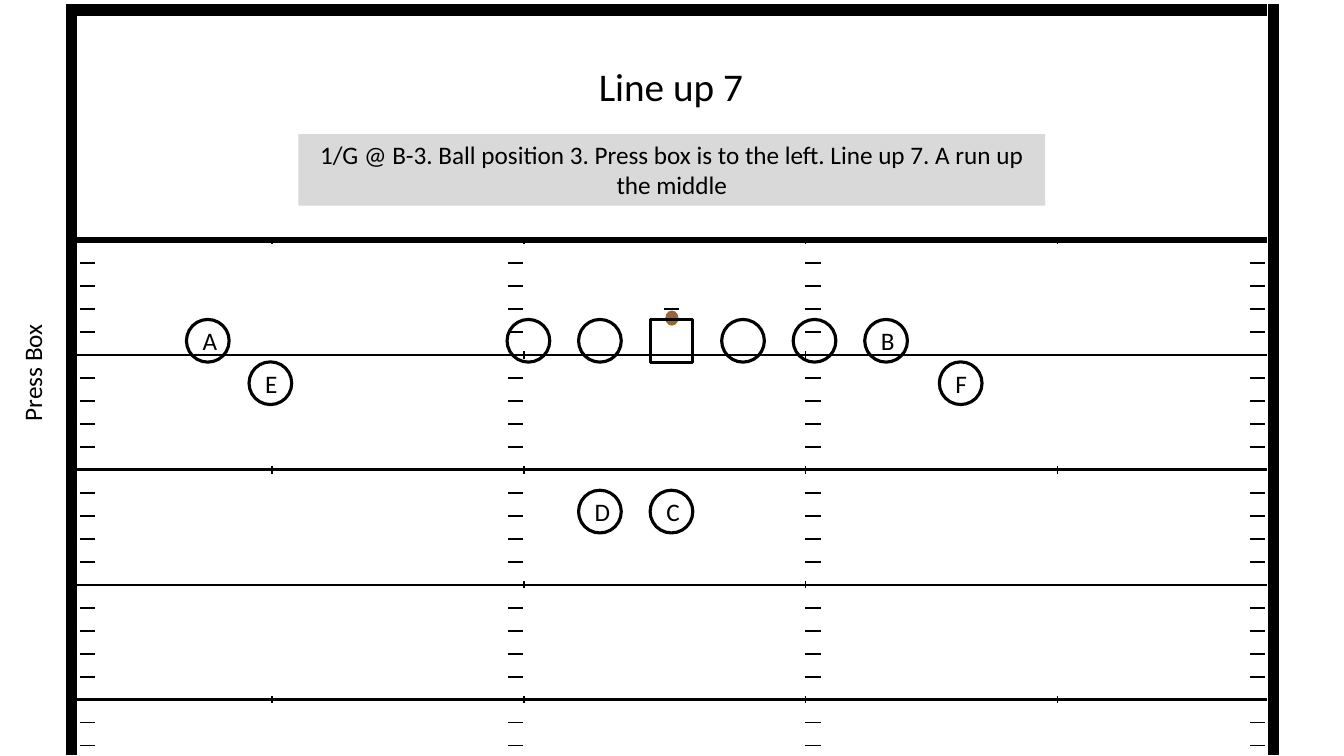
"""Builds a football line-up slide with field markings and player positions."""
from pptx import Presentation
from pptx.dml.color import RGBColor
from pptx.enum.shapes import MSO_CONNECTOR, MSO_SHAPE
from pptx.enum.text import MSO_ANCHOR, MSO_AUTO_SIZE, PP_ALIGN
from pptx.oxml.ns import qn
from pptx.util import Pt

STRAIGHT = MSO_CONNECTOR.STRAIGHT
OVAL, RECT = MSO_SHAPE.OVAL, MSO_SHAPE.RECTANGLE
TOP, MIDDLE = MSO_ANCHOR.TOP, MSO_ANCHOR.MIDDLE
LEFT, CENTER, JUSTIFY = PP_ALIGN.LEFT, PP_ALIGN.CENTER, PP_ALIGN.JUSTIFY
GROW, FIXED = MSO_AUTO_SIZE.SHAPE_TO_FIT_TEXT, MSO_AUTO_SIZE.NONE

COLORS = {"ink": "000000", "ball": "996633", "call": "D9D9D9"}
FONT = "Calibri"

TITLE = "Line up 7"
CALL = ("1/G @ B-3. Ball position 3. Press box is to the left. "
        "Line up 7. A run up the middle")
SIDE_LABEL = "Press Box"

SLIDE_W, SLIDE_H = 960, 540
FIELD_LEFT, FIELD_RIGHT = 54.7, 905
SIDELINES = [51.1, 909.4]
FIELD_TOP, BACK_LINE = 2.9, 7.2
GOAL_Y, YARD = 171.36, 16.42
YARD_LINE_WEIGHTS = [4, 1.25, 2, 1.25, 2]
HASH_COLUMNS = [56.9, 362.9, 575.3, 892.8]
HASH_W, MARK_WEIGHT = 10.8, 1.25
OUTER_TICKS, INNER_TICKS = [194.4, 755.3], [374.4, 575.3]
TICK_HALF = 2.7

CENTER_X, LINE_Y, PLAYER = 464.4, 228.2, 30.5
LINE_GAP = 51.1
WING_Y, BACK_Y = 258.5, 350.2
BLOCKERS = [-2, -1, 1, 2]
PLAYERS = [
    ("C", CENTER_X, BACK_Y),
    ("D", CENTER_X - LINE_GAP, BACK_Y),
    ("A", 133.2, LINE_Y),
    ("B", CENTER_X + 3 * LINE_GAP, LINE_Y),
    ("F", 671, WING_Y),
    ("E", 177.9, WING_Y),
]


def color(name):
    return RGBColor.from_string(COLORS[name])


def draw_line(slide, x1, y1, x2, y2, weight):
    line = slide.shapes.add_connector(STRAIGHT, Pt(x1), Pt(y1), Pt(x2), Pt(y2))
    line.line.color.rgb = color("ink")
    line.line.width = Pt(weight)
    properties = line._element.spPr
    properties.append(properties.makeelement(qn("a:effectLst"), {}))


def draw_shape(slide, kind, box, fill=None, weight=0):
    shape = slide.shapes.add_shape(kind, *map(Pt, box))
    shape.shadow.inherit = False
    if fill:
        shape.fill.solid()
        shape.fill.fore_color.rgb = color(fill)
    else:
        shape.fill.background()
    if weight:
        shape.line.color.rgb = color("ink")
        shape.line.width = Pt(weight)
    else:
        shape.line.fill.background()
    return shape


def write(shape, text, size, align, anchor=TOP, wrap=True, fit=GROW):
    frame = shape.text_frame
    frame.text = text
    frame_format = {"word_wrap": wrap, "auto_size": fit, "vertical_anchor": anchor}
    for key, value in frame_format.items():
        setattr(frame, key, value)
    paragraph = frame.paragraphs[0]
    paragraph.alignment = align
    font = paragraph.runs[0].font
    for key, value in {"name": FONT, "size": Pt(size)}.items():
        setattr(font, key, value)
    font.color.rgb = color("ink")


def place(shape, box):
    for key, value in zip(("left", "top", "width", "height"), box):
        setattr(shape, key, Pt(value))


def draw_field(slide):
    for index, weight in enumerate(YARD_LINE_WEIGHTS):
        y = GOAL_Y + 5 * index * YARD
        draw_line(slide, FIELD_LEFT, y, FIELD_RIGHT, y, weight)
        ticks = INNER_TICKS if index % 2 else INNER_TICKS + OUTER_TICKS
        tick_top = y - TICK_HALF if index else y
        for x in ticks:
            draw_line(slide, x, tick_top, x, y + TICK_HALF, MARK_WEIGHT)
    for yard in range(1, int((SLIDE_H - GOAL_Y) / YARD) + 1):
        if yard % 5:
            y = GOAL_Y + yard * YARD
            for x in HASH_COLUMNS:
                draw_line(slide, x, y, x + HASH_W, y, MARK_WEIGHT)
    ball_y = GOAL_Y + 3 * YARD
    draw_line(slide, 474.5, ball_y, 474.5 + HASH_W, ball_y, MARK_WEIGHT)
    for x in SIDELINES:
        draw_line(slide, x, SLIDE_H - 1, x, FIELD_TOP, 8)
    draw_line(slide, FIELD_LEFT, BACK_LINE, FIELD_RIGHT, BACK_LINE, 8)
    ball = draw_shape(slide, OVAL, (474.5, 222.5, 10.8, 9.4), "ball")
    ball.rotation = 90
    press_box = slide.shapes.add_textbox(Pt(8.6), Pt(231.1), Pt(36), Pt(77))
    write(press_box, SIDE_LABEL, 18, LEFT, wrap=False)
    press_box.text_frame._txBody.bodyPr.set("vert", "vert270")
    place(press_box, (8.6, 231.1, 36, 77))


def draw_players(slide):
    draw_shape(slide, RECT, (CENTER_X, LINE_Y, PLAYER, PLAYER), weight=2.25)
    for step in BLOCKERS:
        x = CENTER_X + step * LINE_GAP
        draw_shape(slide, OVAL, (x, LINE_Y, PLAYER, PLAYER), weight=2.25)
    for letter, x, y in PLAYERS:
        player = draw_shape(slide, OVAL, (x, y, PLAYER, PLAYER), weight=2.25)
        write(player, letter, 18, JUSTIFY, MIDDLE, fit=FIXED)


def main():
    deck = Presentation()
    deck.slide_width, deck.slide_height = Pt(SLIDE_W), Pt(SLIDE_H)
    slide = deck.slides.add_slide(deck.slide_layouts[5])
    draw_field(slide)
    draw_players(slide)
    title = slide.shapes.title
    place(title, (420.5, 41, 118.8, 41))
    write(title, TITLE, 28, LEFT, wrap=False)
    call = draw_shape(slide, RECT, (213.1, 95.8, 533.5, 51.1), "call")
    write(call, CALL, 18, CENTER)
    deck.save("out.pptx")


if __name__ == "__main__":
    main()
